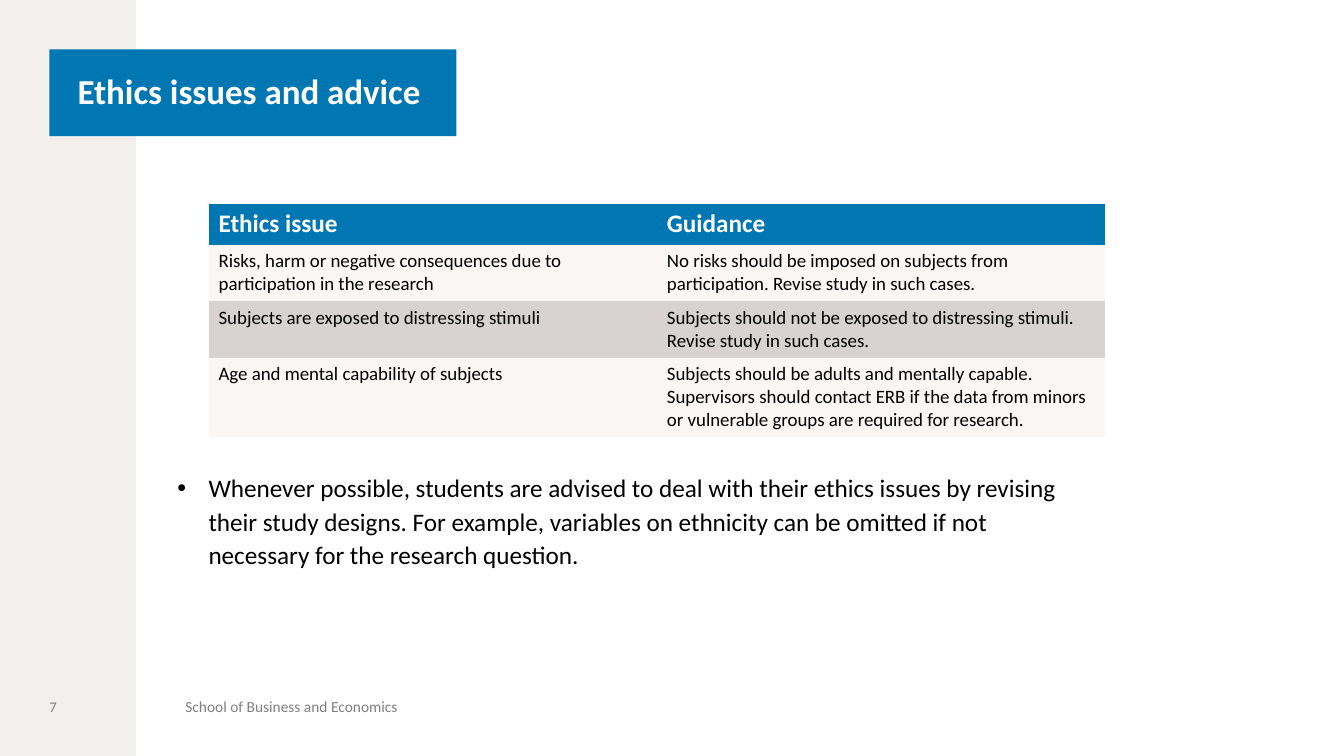
from pptx import Presentation
from pptx.dml.color import RGBColor
from pptx.enum.shapes import MSO_SHAPE
from pptx.enum.text import MSO_ANCHOR, MSO_AUTO_SIZE, PP_ALIGN
from pptx.oxml.ns import qn
from pptx.util import Inches, Pt
from lxml import etree

FONT = "Calibri"
COLORS = {
    "blue": "0077B3",
    "sidebar": "F2EFED",
    "light": "FAF7F5",
    "dark": "D8D3D0",
    "white": "FFFFFF",
    "black": "000000",
    "grey": "7F7F7F",
}
NO_STYLE = "{2D5ABB26-0587-4C30-8999-92F81FD0307C}"
ROWS = [
    ("Ethics issue", "Guidance"),
    ("Risks, harm or negative consequences due to participation in the research",
     "No risks should be imposed on subjects from participation. "
     "Revise study in such cases."),
    ("Subjects are exposed to distressing stimuli",
     "Subjects should not be exposed to distressing stimuli. "
     "Revise study in such cases."),
    ("Age and mental capability of subjects",
     "Subjects should be adults and mentally capable. Supervisors should contact "
     "ERB if the data from minors or vulnerable groups are required for research."),
]
ROW_HEIGHTS = [0.41, 0.56, 0.56, 0.78]
ADVICE = ("Whenever possible, students are advised to deal with their ethics issues "
          "by revising their study designs. For example, variables on ethnicity can be "
          "omitted if not necessary for the research question.")


def rgb(name):
    return RGBColor.from_string(COLORS[name])


def fill(obj, color):
    obj.fill.solid()
    obj.fill.fore_color.rgb = rgb(color)


def place(sp, left, top, width, height):
    sp.left, sp.top = Inches(left), Inches(top)
    sp.width, sp.height = Inches(width), Inches(height)


def add_run(p, text, size, color, bold=False):
    r = p.add_run()
    r.text = text
    r.font.name, r.font.size, r.font.bold = FONT, Pt(size), bold
    r.font.color.rgb = rgb(color)


def set_frame(tf, anchor, left=0, other=0):
    tf.word_wrap = True
    tf.auto_size = MSO_AUTO_SIZE.NONE
    tf.vertical_anchor = anchor
    tf.margin_left = Inches(left)
    tf.margin_top = tf.margin_right = tf.margin_bottom = Inches(other)


def add_sidebar(s):
    """Draw the side band behind the placeholders."""
    sp = s.shapes.add_shape(MSO_SHAPE.RECTANGLE, 0, 0, Inches(1.35), Inches(7.5))
    sp.shadow.inherit = False
    fill(sp, "sidebar")
    sp.line.fill.background()
    sp._element.getparent().insert(2, sp._element)


def set_title(sp, text):
    place(sp, 0.49, 0.49, 4.04, 0.86)
    fill(sp, "blue")
    set_frame(sp.text_frame, MSO_ANCHOR.MIDDLE, 0.28, 0.24)
    p = sp.text_frame.paragraphs[0]
    p.alignment = PP_ALIGN.LEFT
    p.line_spacing = 0.9
    add_run(p, text, 25, "white", bold=True)


def set_bullet(sp, text):
    place(sp, 1.76, 4.66, 9.08, 1.71)
    set_frame(sp.text_frame, MSO_ANCHOR.TOP)
    p = sp.text_frame.paragraphs[0]
    p.line_spacing = 1.1
    p.space_before = Pt(0)
    pPr = p._p.get_or_add_pPr()
    pPr.set("marL", str(Inches(0.31)))
    pPr.set("indent", str(-Inches(0.31)))
    etree.SubElement(pPr, qn("a:buChar")).set("char", "•")
    add_run(p, text, 18, "black")


def add_ethics_table(s):
    frame = s.shapes.add_table(len(ROWS), 2, Inches(2.07), Inches(2.02),
                               Inches(8.9), Inches(sum(ROW_HEIGHTS)))
    table = frame.table
    table._tbl.tblPr.find(qn("a:tableStyleId")).text = NO_STYLE
    for i, (texts, height) in enumerate(zip(ROWS, ROW_HEIGHTS)):
        table.rows[i].height = Inches(height)
        header = i == 0
        background = "blue" if header else ("light" if i % 2 else "dark")
        for cell, text in zip(table.rows[i].cells, texts):
            fill(cell, background)
            add_run(cell.text_frame.paragraphs[0], text, 18 if header else 13.5,
                    "white" if header else "black", bold=header)


def add_footer(s, text, left, width, size):
    sp = s.shapes.add_textbox(Inches(left), Inches(6.52), Inches(width), Inches(0.98))
    set_frame(sp.text_frame, MSO_ANCHOR.MIDDLE)
    add_run(sp.text_frame.paragraphs[0], text, size, "grey")


def main():
    prs = Presentation()
    prs.slide_width, prs.slide_height = Inches(13.34), Inches(7.5)
    s = prs.slides.add_slide(prs.slide_layouts[1])
    add_sidebar(s)
    set_title(s.shapes.title, "Ethics issues and advice")
    set_bullet(s.placeholders[1], ADVICE)
    add_footer(s, "School of Business and Economics", 1.84, 7.66, 11)
    add_footer(s, "7", 0.49, 0.86, 10.5)
    add_ethics_table(s)
    prs.save("out.pptx")


if __name__ == "__main__":
    main()
